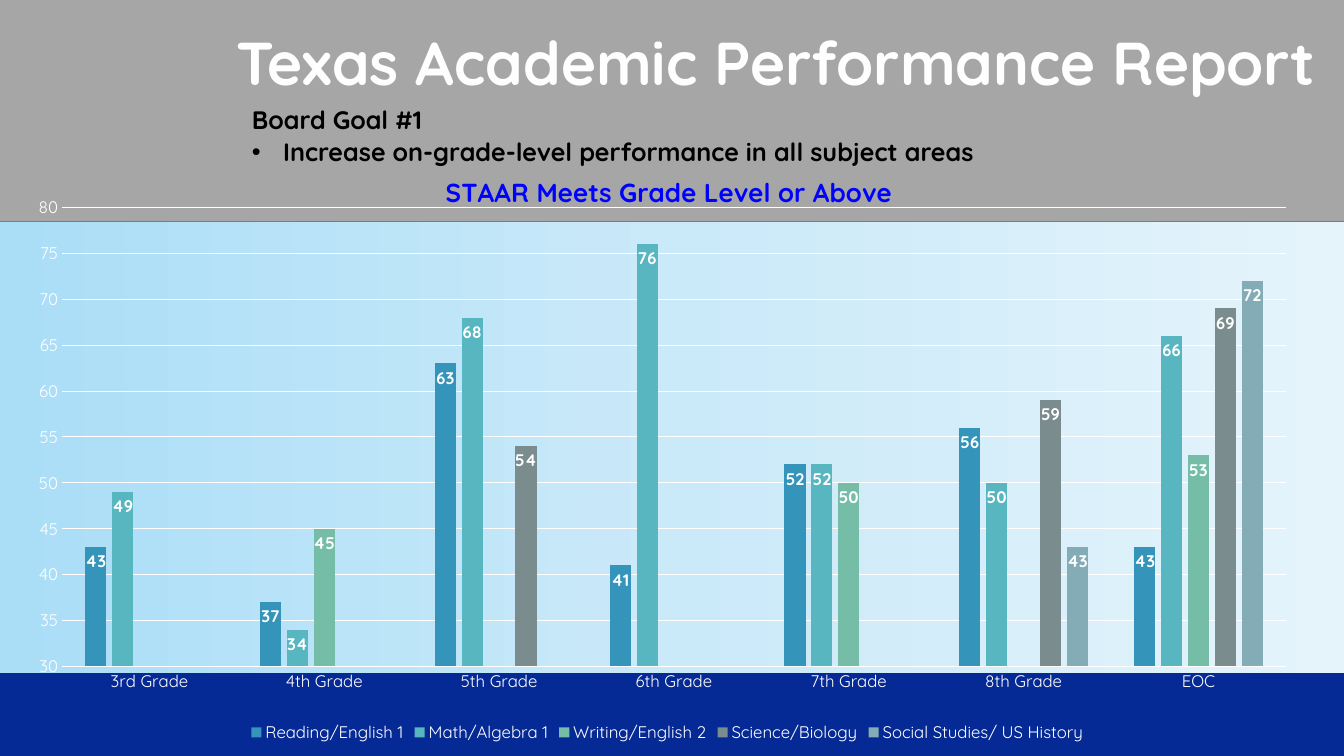
import copy
from dataclasses import dataclass
from typing import Optional

import lxml.etree
import pptx
import pptx.chart.data
import pptx.dml.color
import pptx.enum.chart
import pptx.enum.shapes
import pptx.enum.text
import pptx.oxml.ns
import pptx.util

WIDTH, HEIGHT = pptx.util.Inches(13.33), pptx.util.Inches(7.5)
COLUMNS, ROWS = 160, 90


@dataclass(frozen=True)
class Theme:
    font: str = "Quicksand"
    background: str = "062A95"
    header: str = "A6A6A6"
    sky: tuple = ("AADEF7", "CAE9F9", "E5F4FB")
    title: str = "FEFEFE"
    body: str = "000000"
    chart_title: str = "0000FF"
    chart_text: str = "FFFFFF"
    title_size: float = 43.2
    body_size: float = 18
    chart_title_size: float = 18.6
    chart_size: float = 12
    line_width: float = 0.75


@dataclass(frozen=True)
class Box:
    """A rectangle in grid columns and rows."""
    left: float
    top: float
    width: float
    height: float


@dataclass(frozen=True)
class Subject:
    name: str
    color: str
    scores: tuple


THEME = Theme()
HEADER = Box(0, 0, COLUMNS, 26.4)
SKY = Box(0, 26.4, COLUMNS, 53.76)
TITLE = Box(27, 2.4, 133, 13.44)
GOAL = Box(28.8, 11.52, 149.64, 8.88)
CHART = Box(3.12, 17.76, 152.64, 71.16)
PLOT = Box(7.39, 24.7, 145.7, 54.65)
CHART_TITLE = Box(52.5, 20.05, 0, 0)

GRADES = ("3rd Grade", "4th Grade", "5th Grade", "6th Grade", "7th Grade", "8th Grade", "EOC")
SUBJECTS = (
    Subject("Reading/English 1", "3494BA", (43, 37, 63, 41, 52, 56, 43)),
    Subject("Math/Algebra 1", "58B6C0", (49, 34, 68, 76, 52, 50, 66)),
    Subject("Writing/English 2", "75BDA7", (None, 45, None, None, 50, None, 53)),
    Subject("Science/Biology", "7A8C8E", (None, None, 54, None, None, 59, 69)),
    Subject("Social Studies/ US History", "84ACB6", (None, None, None, None, None, 43, 72)),
)


def rgb(color: str) -> pptx.dml.color.RGBColor:
    return pptx.dml.color.RGBColor.from_string(color)


def place(box: Box) -> tuple:
    """Turn a grid box into left, top, width and height in EMU."""
    return (round(box.left * WIDTH / COLUMNS), round(box.top * HEIGHT / ROWS),
            round(box.width * WIDTH / COLUMNS), round(box.height * HEIGHT / ROWS))


def style_font(font, size: float, color: str, bold: bool = False) -> None:
    font.name = THEME.font
    font.size = pptx.util.Pt(size)
    font.bold = bold
    font.color.rgb = rgb(color)


def add_run(p, text: str, size: float, color: str) -> None:
    r = p.add_run()
    r.text = text
    style_font(r.font, size, color, bold=True)


def add_band(s, box: Box):
    """Add a borderless rectangle behind the placeholders."""
    sp = s.shapes.add_shape(pptx.enum.shapes.MSO_SHAPE.RECTANGLE, *place(box))
    sp.shadow.inherit = False
    sp.line.fill.background()
    s.shapes.title.element.addprevious(sp.element)
    return sp


def add_bands(s) -> None:
    header = add_band(s, HEADER)
    header.fill.solid()
    header.fill.fore_color.rgb = rgb(THEME.header)

    fill = add_band(s, SKY).fill
    fill.gradient()
    fill.gradient_angle = 0
    stops = fill._fill._gradFill.gsLst
    stops.append(copy.deepcopy(stops[-1]))
    for i, (stop, color) in enumerate(zip(fill.gradient_stops, THEME.sky)):
        stop.position = i / (len(THEME.sky) - 1)
        stop.color.rgb = rgb(color)


def fill_placeholder(sp, box: Box, auto_size):
    sp.left, sp.top, sp.width, sp.height = place(box)
    tf = sp.text_frame
    tf.word_wrap = True
    tf.auto_size = auto_size
    tf.vertical_anchor = pptx.enum.text.MSO_ANCHOR.TOP
    return tf


def add_title(s) -> None:
    tf = fill_placeholder(s.shapes.title, TITLE, pptx.enum.text.MSO_AUTO_SIZE.NONE)
    p = tf.paragraphs[0]
    p.alignment = pptx.enum.text.PP_ALIGN.LEFT
    add_run(p, "Texas Academic Performance Report", THEME.title_size, THEME.title)


def add_goal(s) -> None:
    tf = fill_placeholder(s.placeholders[1], GOAL, pptx.enum.text.MSO_AUTO_SIZE.SHAPE_TO_FIT_TEXT)
    lines = (("Board Goal #1", 0, None),
             ("Increase on-grade-level performance in all subject areas", 0.31, "•"))
    for i, (text, indent, bullet) in enumerate(lines):
        p = tf.paragraphs[0] if i == 0 else tf.add_paragraph()
        pPr = p._p.get_or_add_pPr()
        pPr.set("marL", str(pptx.util.Inches(indent)))
        pPr.set("indent", str(-pptx.util.Inches(indent)))
        tag = "a:buChar" if bullet else "a:buNone"
        bu = lxml.etree.SubElement(pPr, pptx.oxml.ns.qn(tag))
        if bullet:
            bu.set("char", bullet)
        p.line_spacing = 1.07
        p.space_before = pptx.util.Pt(0)
        add_run(p, text, THEME.body_size, THEME.body)


def set_layout(parent, index: int, box: Box) -> None:
    """Fix the place of a chart part, given on the slide grid."""
    qn = pptx.oxml.ns.qn
    for old in parent.findall(qn("c:layout")):
        parent.remove(old)
    layout = lxml.etree.Element(qn("c:layout"))
    manual = lxml.etree.SubElement(layout, qn("c:manualLayout"))
    values = {"xMode": "edge", "yMode": "edge",
              "x": (box.left - CHART.left) / CHART.width,
              "y": (box.top - CHART.top) / CHART.height}
    if box.width:
        values = {"layoutTarget": "inner", **values,
                  "w": box.width / CHART.width, "h": box.height / CHART.height}
    for name, value in values.items():
        lxml.etree.SubElement(manual, qn(f"c:{name}")).set("val", str(value))
    parent.insert(index, layout)


def style_axis(axis, line_color: Optional[str]) -> None:
    axis.major_tick_mark = axis.minor_tick_mark = pptx.enum.chart.XL_TICK_MARK.NONE
    style_font(axis.tick_labels.font, THEME.chart_size, THEME.chart_text)
    if line_color:
        style_line(axis.format.line, line_color)
    else:
        axis.format.line.fill.background()


def style_line(line, color: str) -> None:
    line.color.rgb = rgb(color)
    line.width = pptx.util.Pt(THEME.line_width)


def add_scores(s) -> None:
    data = pptx.chart.data.CategoryChartData()
    data.categories = GRADES
    for subject in SUBJECTS:
        data.add_series(subject.name, subject.scores)
    kind = pptx.enum.chart.XL_CHART_TYPE.COLUMN_CLUSTERED
    chart = s.shapes.add_chart(kind, *place(CHART), data).chart
    style_font(chart.font, THEME.chart_size, THEME.chart_text)

    title = chart.chart_title
    add_run(title.text_frame.paragraphs[0], "STAAR Meets Grade Level or Above",
            THEME.chart_title_size, THEME.chart_title)
    set_layout(title._element, 1, CHART_TITLE)
    set_layout(chart._chartSpace.chart.plotArea, 0, PLOT)

    chart.has_legend = True
    chart.legend.position = pptx.enum.chart.XL_LEGEND_POSITION.BOTTOM
    chart.legend.include_in_layout = False
    style_font(chart.legend.font, THEME.chart_size, THEME.chart_text)

    style_axis(chart.category_axis, THEME.chart_text)
    axis = chart.value_axis
    style_axis(axis, None)
    axis.minimum_scale, axis.maximum_scale, axis.major_unit = 30, 80, 5
    style_line(axis.major_gridlines.format.line, THEME.chart_text)

    plot = chart.plots[0]
    plot.gap_width, plot.overlap, plot.vary_by_categories = 219, -27, False
    for series, subject in zip(plot.series, SUBJECTS):
        series.format.fill.solid()
        series.format.fill.fore_color.rgb = rgb(subject.color)
        labels = series.data_labels
        labels.show_value = True
        labels.position = pptx.enum.chart.XL_LABEL_POSITION.INSIDE_END
        style_font(labels.font, THEME.chart_size, THEME.chart_text, bold=True)


def main() -> None:
    prs = pptx.Presentation()
    prs.slide_width, prs.slide_height = WIDTH, HEIGHT
    s = prs.slides.add_slide(prs.slide_layouts[1])
    s.background.fill.solid()
    s.background.fill.fore_color.rgb = rgb(THEME.background)
    add_bands(s)
    add_title(s)
    add_goal(s)
    add_scores(s)
    prs.save("out.pptx")


if __name__ == "__main__":
    main()
